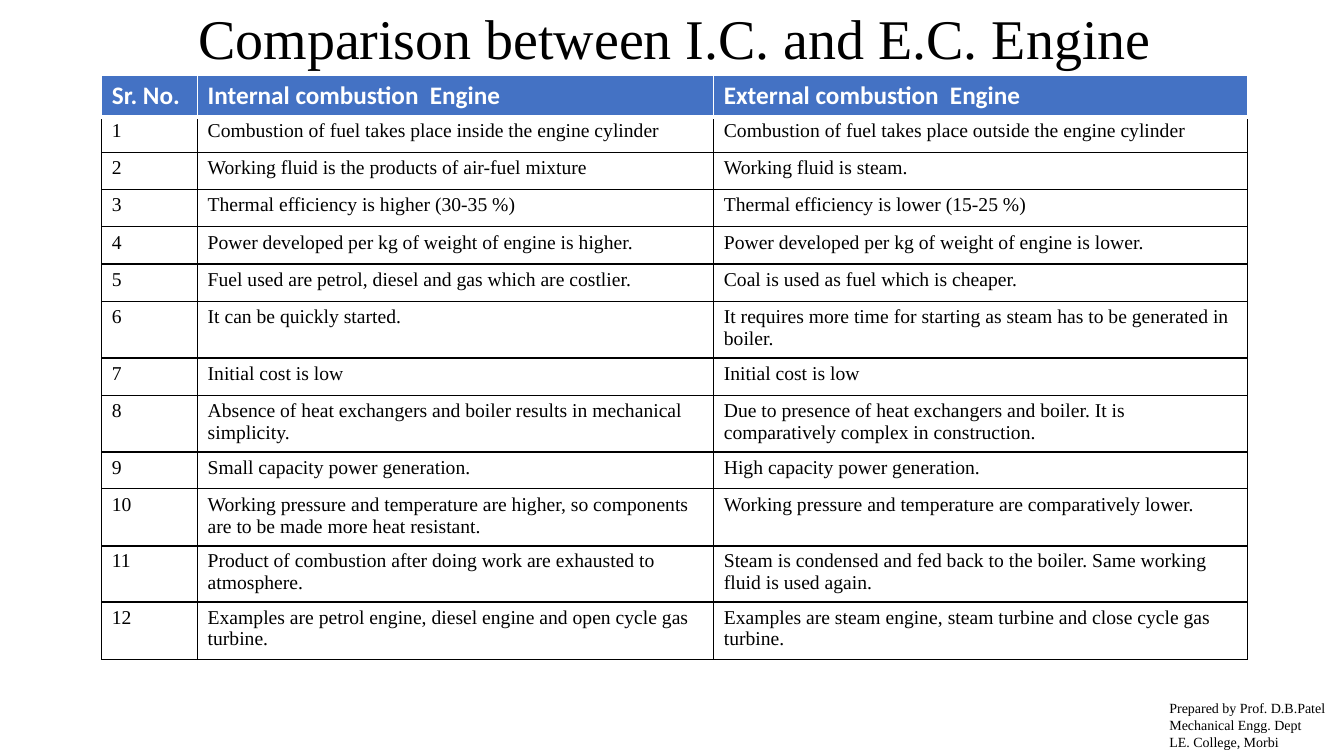
"""Build the slide comparing internal and external combustion engines."""
from lxml import etree
from pptx import Presentation
from pptx.dml.color import RGBColor
from pptx.enum.text import MSO_ANCHOR, PP_ALIGN
from pptx.oxml.ns import qn
from pptx.util import Inches, Pt

TOP, CENTER, LEFT = MSO_ANCHOR.TOP, PP_ALIGN.CENTER, PP_ALIGN.LEFT

TITLE = "Comparison between I.C. and E.C. Engine"
HEADINGS = ("Sr. No.", "Internal combustion  Engine", "External combustion  Engine")
COMPARISONS = [
    ("Combustion of fuel takes place inside the engine cylinder",
     "Combustion of fuel takes place outside the engine cylinder"),
    ("Working fluid is the products of air-fuel mixture", "Working fluid is steam."),
    ("Thermal efficiency is higher (30-35 %)", "Thermal efficiency is lower (15-25 %)"),
    ("Power developed per kg of weight of engine is higher.",
     "Power developed per kg of weight of engine is lower."),
    ("Fuel used are petrol, diesel and gas which are costlier.",
     "Coal is used as fuel which is cheaper."),
    ("It can be quickly started.",
     "It requires more time for starting as steam has to be generated in boiler."),
    ("Initial cost is low", "Initial cost is low"),
    ("Absence of heat exchangers and boiler results in mechanical simplicity.",
     "Due to presence of heat exchangers and boiler. It is comparatively complex in construction."),
    ("Small capacity power generation.", "High capacity power generation."),
    ("Working pressure and temperature are higher, so components are to be made more heat resistant.",
     "Working pressure and temperature are comparatively lower."),
    ("Product of combustion after doing work are exhausted to atmosphere.",
     "Steam is condensed and fed back to the boiler. Same working fluid is used again."),
    ("Examples are petrol engine, diesel engine and open cycle gas turbine.",
     "Examples are steam engine, steam turbine and close cycle gas turbine."),
]
TWO_LINE_ROWS = {6, 8, 10, 11, 12}
CREDITS = ["Prepared by Prof. D.B.Patel", "Mechanical Engg. Dept", "LE. College, Morbi"]

COLORS = {"ink": "000000", "paper": "FFFFFF", "heading": "4472C4"}
SERIF, SANS = "Times New Roman", "Calibri"
TABLE_LEFT, COLUMN_WIDTHS = 1.01, (0.95, 5.12, 5.29)
HEADING_TOP, HEADING_HEIGHT = 0.75, 0.41
FIRST_ROW_TOP = 1.14
ONE_LINE_HEIGHT, TWO_LINE_HEIGHT, TWO_LINE_STEP = 0.37, 0.57, 0.56


def write(frame, lines, size, font=SERIF, color="ink", bold=False, align=LEFT):
    """Fill a text frame with one formatted paragraph per line."""
    frame.word_wrap = True
    for index, line in enumerate(lines):
        paragraph = frame.paragraphs[0] if index == 0 else frame.add_paragraph()
        paragraph.alignment = align
        run = paragraph.add_run()
        run.text = line
        run.font.size, run.font.name, run.font.bold = Pt(size), font, bold
        run.font.color.rgb = RGBColor.from_string(COLORS[color])


def set_borders(cell, color, bottom_width):
    """Draw all four borders of a cell, 1 pt except at the bottom."""
    properties = cell._tc.get_or_add_tcPr()
    for index, (side, width) in enumerate(
            (("lnL", 1), ("lnR", 1), ("lnT", 1), ("lnB", bottom_width))):
        border = etree.Element(qn(f"a:{side}"), w=str(Pt(width)))
        fill = etree.SubElement(border, qn("a:solidFill"))
        etree.SubElement(fill, qn("a:srgbClr"), val=COLORS[color])
        properties.insert(index, border)


def add_row(slide, texts, top, height, fill=None, border="ink", bottom_width=1, **text_format):
    """Add one row of the comparison as a table of its own."""
    row = slide.shapes.add_table(
        1, len(texts), Inches(TABLE_LEFT), Inches(top),
        Inches(sum(COLUMN_WIDTHS)), Inches(height)).table
    row.first_row = row.horz_banding = False
    for column, width, cell, text in zip(row.columns, COLUMN_WIDTHS, row.iter_cells(), texts):
        column.width = Inches(width)
        if fill:
            cell.fill.solid()
            cell.fill.fore_color.rgb = RGBColor.from_string(COLORS[fill])
        else:
            cell.fill.background()
        set_borders(cell, border, bottom_width)
        write(cell.text_frame, [text], **text_format)


def main():
    """Assemble and save the slide."""
    deck = Presentation()
    deck.slide_width, deck.slide_height = Inches(13.33), Inches(7.5)
    slide = deck.slides.add_slide(deck.slide_layouts[5])

    title = slide.shapes.title
    title.left, title.top = Inches(1.12), Inches(-0.02)
    title.width, title.height = Inches(11.14), Inches(0.77)
    title.text_frame.vertical_anchor = TOP
    write(title.text_frame, [TITLE], size=40, align=CENTER)

    top = FIRST_ROW_TOP
    for number, engines in enumerate(COMPARISONS, 1):
        height, step = ((TWO_LINE_HEIGHT, TWO_LINE_STEP) if number in TWO_LINE_ROWS
                        else (ONE_LINE_HEIGHT, ONE_LINE_HEIGHT))
        add_row(slide, (str(number), *engines), top, height, size=14)
        top += step
    add_row(slide, HEADINGS, HEADING_TOP, HEADING_HEIGHT, fill="heading", border="paper",
            bottom_width=3, size=18, font=SANS, color="paper", bold=True)

    credits = slide.shapes.add_textbox(Inches(11.5), Inches(6.89), Inches(1.83), Inches(0.61))
    write(credits.text_frame, CREDITS, size=10)

    deck.save("out.pptx")


if __name__ == "__main__":
    main()
